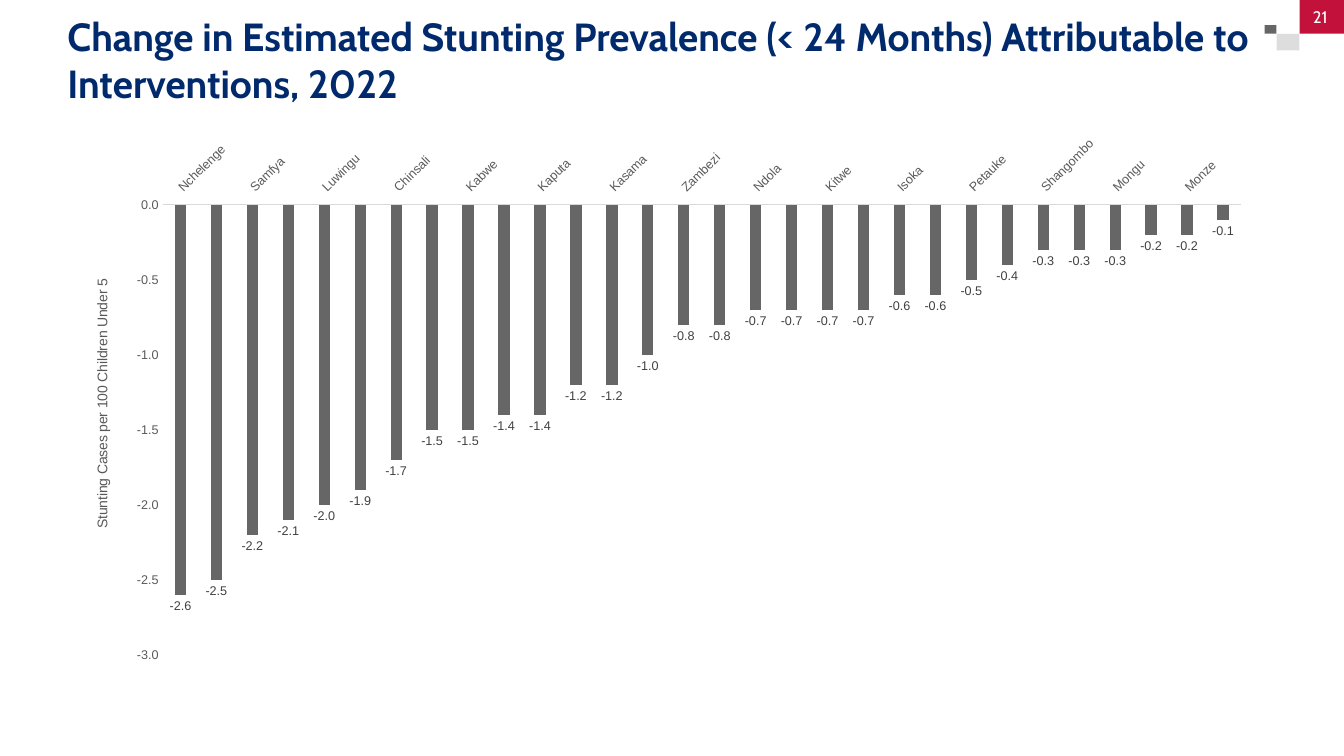
from lxml import etree
from pptx import Presentation
from pptx.chart.data import CategoryChartData
from pptx.dml.color import RGBColor
from pptx.enum.chart import XL_CHART_TYPE, XL_LABEL_POSITION, XL_TICK_LABEL_POSITION, XL_TICK_MARK
from pptx.enum.shapes import MSO_SHAPE
from pptx.enum.text import MSO_ANCHOR, MSO_AUTO_SIZE, PP_ALIGN
from pptx.oxml import parse_xml
from pptx.oxml.ns import nsdecls, qn
from pptx.util import Cm, Pt

NAVY = RGBColor(0x00, 0x2A, 0x6C)
RED = RGBColor(0xC2, 0x11, 0x3A)
GRAY = RGBColor(0x66, 0x66, 0x66)
PALE = RGBColor(0xDD, 0xDD, 0xDD)
WHITE = RGBColor(0xFF, 0xFF, 0xFF)
BLACK = RGBColor(0x00, 0x00, 0x00)
AXIS_TEXT = RGBColor(0x59, 0x59, 0x59)
AXIS_LINE = RGBColor(0xD9, 0xD9, 0xD9)
LABEL_TEXT = RGBColor(0x40, 0x40, 0x40)

DISTRICTS = [
    ("Nchelenge", -2.6), ("Mansa", -2.5), ("Samfya", -2.2),
    ("Kapiri Mposhi", -2.1), ("Luwingu", -2.0), ("Mpika", -1.9),
    ("Chinsali", -1.7), ("Mbala", -1.5), ("Kabwe", -1.5),
    ("Mumbwa", -1.4), ("Kaputa", -1.4), ("Chibombo", -1.2),
    ("Kasama", -1.2), ("Lundazi", -1.0), ("Zambezi", -0.8),
    ("Mwinilunga", -0.8), ("Ndola", -0.7), ("Solwezi", -0.7),
    ("Kitwe", -0.7), ("Katete", -0.7), ("Isoka", -0.6),
    ("Kalabo", -0.6), ("Petauke", -0.5), ("Chipata", -0.4),
    ("Shangombo", -0.3), ("Choma", -0.3), ("Mongu", -0.3),
    ("Lusaka", -0.2), ("Monze", -0.2), ("Kaoma", -0.1),
]


def set_font(font, name, size, color, bold=False):
    font.name = name
    font.size = Pt(size)
    font.bold = bold
    font.color.rgb = color


def fill_text(sp, text, align, size, color, bold=False):
    """Put one run in a shape without insets, centred vertically."""
    tf = sp.text_frame
    tf.word_wrap = True
    tf.auto_size = MSO_AUTO_SIZE.NONE
    tf.vertical_anchor = MSO_ANCHOR.MIDDLE
    tf.margin_left = tf.margin_right = tf.margin_top = tf.margin_bottom = 0
    p = tf.paragraphs[0]
    p.alignment = align
    r = p.add_run()
    r.text = text
    set_font(r.font, "Cabin", size, color, bold)


def add_title(s, x, y, w, h):
    sp = s.shapes.title
    sp.left, sp.top, sp.width, sp.height = x, y, w, h
    fill_text(sp, "Change in Estimated Stunting Prevalence (< 24 Months) "
              "Attributable to Interventions, 2022", PP_ALIGN.LEFT, 28, NAVY, True)


def add_page_corner(s, x, y, w, h):
    """Draw the three stepped squares and the page number in the red one."""
    steps = [(0, 0.5, 0.15, 0.17, GRAY), (0.15, 0.67, 0.29, 0.33, PALE),
             (0.44, 0, 0.56, 0.67, RED)]
    for dx, dy, dw, dh, color in steps:
        sp = s.shapes.add_shape(MSO_SHAPE.RECTANGLE, int(x + w * dx), int(y + h * dy),
                                int(w * dw), int(h * dh))
        sp.shadow.inherit = False
        sp.fill.solid()
        sp.fill.fore_color.rgb = color
        sp.line.fill.background()
    number = s.shapes.add_textbox(sp.left, sp.top, Cm(1.04), sp.height)
    fill_text(number, "21", PP_ALIGN.CENTER, 12, WHITE)


def set_layout(parent, x, y, w=None, h=None):
    """Place a plot area or axis title by fractions of the chart."""
    for old in parent.findall(qn("c:layout")):
        parent.remove(old)
    layout = parse_xml(f"<c:layout {nsdecls('c')}><c:manualLayout/></c:layout>")
    entries = [("xMode", "edge"), ("yMode", "edge"), ("x", x), ("y", y)]
    if w is not None:
        entries = [("layoutTarget", "inner"), *entries, ("w", w), ("h", h)]
    for tag, val in entries:
        etree.SubElement(layout[0], qn(f"c:{tag}")).set("val", str(val))
    text = parent.find(qn("c:tx"))
    if text is None:
        parent.insert(0, layout)
    else:
        text.addnext(layout)


def format_axes(chart):
    cat, val = chart.category_axis, chart.value_axis
    for axis in (cat, val):
        axis.has_major_gridlines = False
        axis.major_tick_mark = axis.minor_tick_mark = XL_TICK_MARK.NONE
        set_font(axis.tick_labels.font, "Arial", 9, AXIS_TEXT)
    cat.tick_label_position = XL_TICK_LABEL_POSITION.HIGH
    cat.format.line.color.rgb = AXIS_LINE
    cat.format.line.width = Pt(0.75)
    cat.tick_labels.font._element.getparent().getparent().getparent().find(
        qn("a:bodyPr")).set("rot", "-2700000")
    val.minimum_scale, val.maximum_scale, val.major_unit = -3, 0, 0.5
    val.tick_labels.number_format = "0.0"
    val.tick_labels.number_format_is_linked = False
    val.format.line.fill.background()
    tf = val.axis_title.text_frame
    r = tf.paragraphs[0].add_run()
    r.text = "Stunting Cases per 100 Children Under 5"
    set_font(r.font, "Arial", 10, AXIS_TEXT)
    tf._txBody.find(qn("a:bodyPr")).set("rot", "-5400000")
    set_layout(val.axis_title._element, 0.02, 0.27)


def add_stunting_chart(s, x, y, w, h):
    data = CategoryChartData(number_format="0.0")
    data.categories = [name for name, _ in DISTRICTS]
    data.add_series("Series 1", [value for _, value in DISTRICTS])
    chart = s.shapes.add_chart(XL_CHART_TYPE.COLUMN_CLUSTERED, x, y, w, h, data).chart
    chart.has_legend = False
    chart.has_title = False
    set_font(chart.font, "Arial", 10, BLACK)
    format_axes(chart)
    plot = chart.plots[0]
    plot.gap_width, plot.overlap = 219, -27
    plot.vary_by_categories = False
    series = plot.series[0]
    series.invert_if_negative = False
    series.format.fill.solid()
    series.format.fill.fore_color.rgb = GRAY
    labels = series.data_labels
    labels.show_value = True
    labels.position = XL_LABEL_POSITION.OUTSIDE_END
    labels.number_format = "0.0"
    labels.number_format_is_linked = False
    set_font(labels.font, "Arial", 9, LABEL_TEXT)
    set_layout(chart._chartSpace.chart.plotArea, 0.08, 0.14, 0.9, 0.82)


def main():
    prs = Presentation()
    prs.slide_width, prs.slide_height = Cm(33.87), Cm(19.05)
    s = prs.slides.add_slide(prs.slide_layouts[5])
    add_page_corner(s, Cm(31.87), 0, Cm(2), Cm(1.27))
    add_title(s, Cm(1.7), Cm(0.5), Cm(30.2), Cm(1.98))
    add_stunting_chart(s, Cm(1.68), Cm(3.23), Cm(30.2), Cm(13.84))
    prs.save("out.pptx")


if __name__ == "__main__":
    main()
